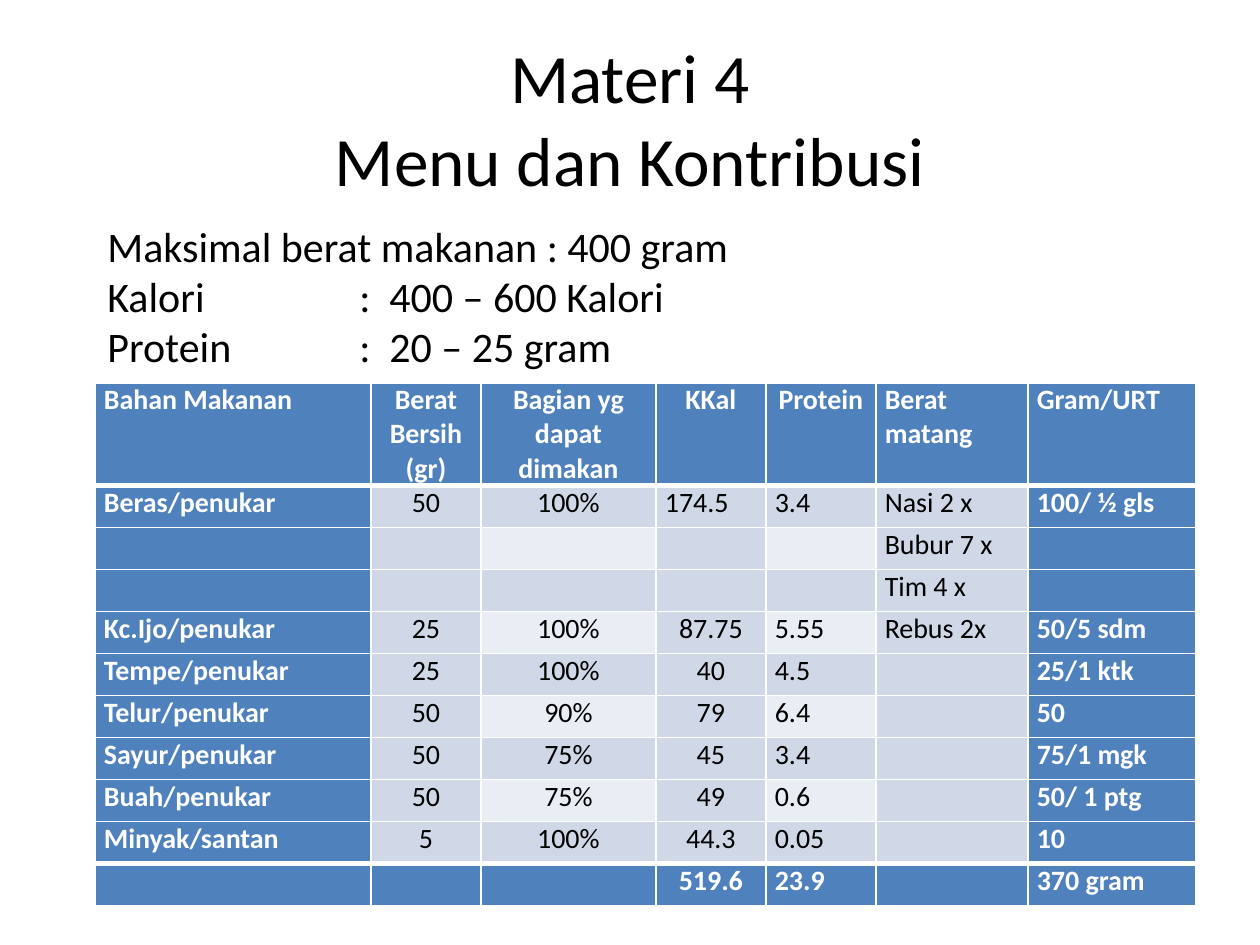
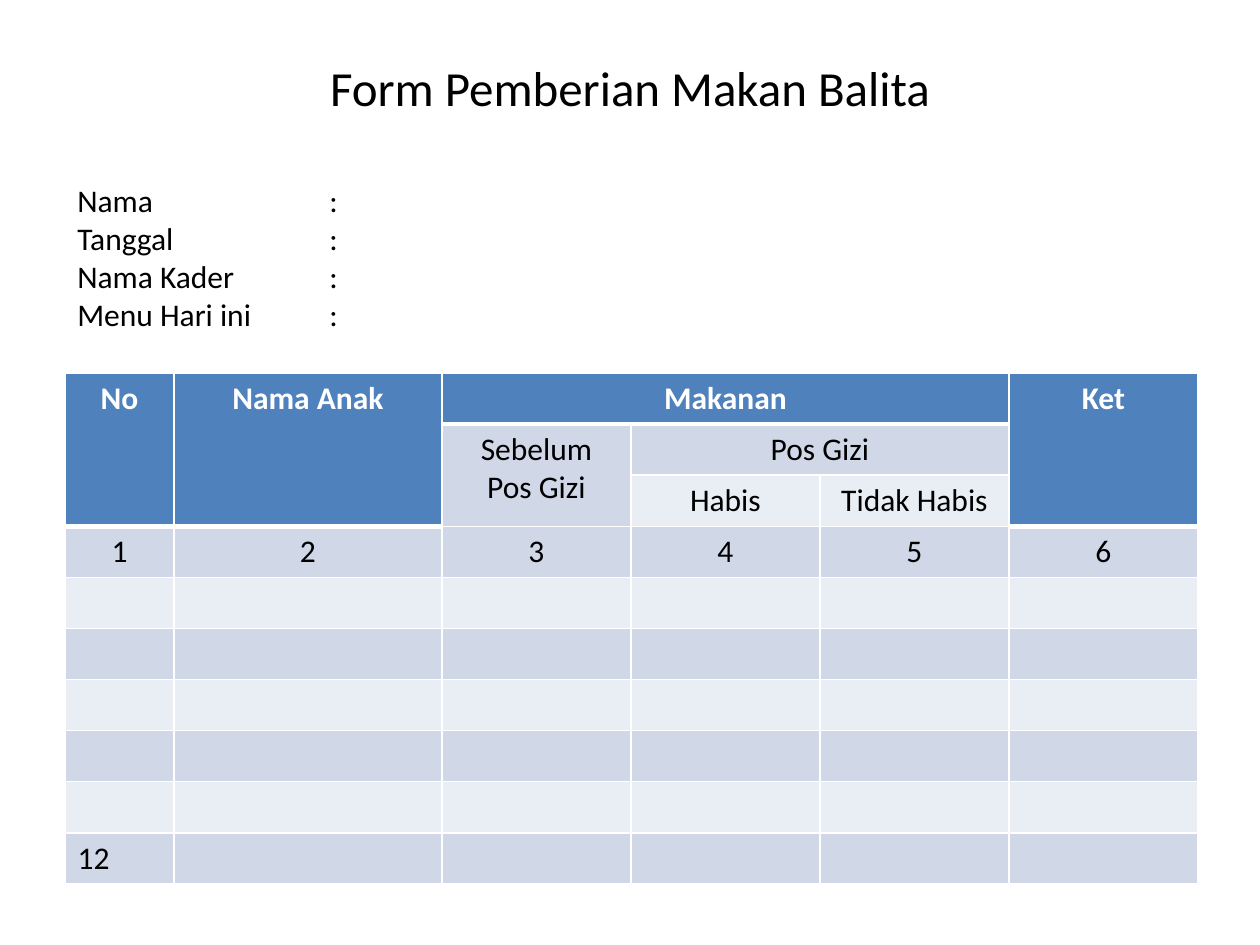
from dataclasses import dataclass

from lxml.etree import SubElement
from pptx import Presentation
from pptx.dml.color import RGBColor
from pptx.enum.text import MSO_ANCHOR, MSO_AUTO_SIZE, PP_ALIGN
from pptx.oxml.ns import qn
from pptx.util import Emu, Pt


@dataclass(frozen=True)
class Theme:
    font: str = "Calibri"
    text: str = "000000"
    inverse: str = "FFFFFF"
    header: str = "4F81BD"
    band: str = "D0D8E8"
    light: str = "E9EDF4"
    thin: int = 1
    thick: int = 3
    menu_title: float = 39.6
    form_title: int = 28
    menu_facts: int = 24
    menu_cell: int = 16
    form_text: int = 18


THEME = Theme()
PX = 914400 / 126
SLIDE_SIZE = (1260, 945)
TAB_STOPS = (252, 282)
TITLE_ONLY = 5

LEFT, CENTER, JUSTIFY = PP_ALIGN.LEFT, PP_ALIGN.CENTER, PP_ALIGN.JUSTIFY

MENU_TITLE = "Materi 4\vMenu dan Kontribusi"
MENU_FACTS = [
    ("Maksimal berat makanan : 400 gram",),
    ("Kalori", ":", "400 – 600 Kalori"),
    ("Protein", ":", "20 – 25 gram"),
]
MENU_ROWS = [
    ("Bahan Makanan", "Berat Bersih (gr)", "Bagian yg dapat dimakan", "KKal", "Protein", "Berat matang", "Gram/URT"),
    ("Beras/penukar", "50", "100%", "174.5", "3.4", "Nasi 2 x", "100/ ½ gls"),
    ("", "", "", "", "", "Bubur 7 x", ""),
    ("", "", "", "", "", "Tim 4 x", ""),
    ("Kc.Ijo/penukar", "25", "100%", "87.75", "5.55", "Rebus 2x", "50/5 sdm"),
    ("Tempe/penukar", "25", "100%", "40", "4.5", "", "25/1 ktk"),
    ("Telur/penukar", "50", "90%", "79", "6.4", "", "50"),
    ("Sayur/penukar", "50", "75%", "45", "3.4", "", "75/1 mgk"),
    ("Buah/penukar", "50", "75%", "49", "0.6", "", "50/ 1 ptg"),
    ("Minyak/santan", "5", "100%", "44.3", "0.05", "", "10"),
    ("", "", "", "519.6", "23.9", "", "370 gram"),
]
MENU_COLUMNS = (276, 110, 175, 110, 110, 152, 168)
MENU_HEIGHTS = [102] + [42] * 10
MENU_ALIGNMENTS = (JUSTIFY, CENTER, CENTER, CENTER, LEFT, JUSTIFY, JUSTIFY)

FORM_TITLE = "Form Pemberian Makan Balita"
FORM_FIELDS = [(name, ":") for name in ("Nama", "Tanggal", "Nama Kader", "Menu Hari ini")]
FORM_ROWS = [
    ("No", "Nama Anak", "Makanan", "", "", "Ket"),
    ("", "", "Sebelum\nPos Gizi", "Pos Gizi", "", ""),
    ("", "", "", "Habis", "Tidak Habis", ""),
    ("1", "2", "3", "4", "5", "6"),
    *[("",) * 6] * 5,
    ("12", "", "", "", "", ""),
]
FORM_COLUMNS = (109, 268, 189, 189, 189, 189)
FORM_HEIGHTS = [51] * 10
FORM_MERGES = [
    ((0, 0), (2, 0)),
    ((0, 1), (2, 1)),
    ((0, 5), (2, 5)),
    ((0, 2), (0, 4)),
    ((1, 2), (2, 2)),
    ((1, 3), (1, 4)),
]
FORM_TALL_HEADERS = (0, 1, 5)


def px(length):
    return Emu(round(length * PX))


def box(*lengths):
    return [px(length) for length in lengths]


def format_text(text_frame, size, color=THEME.text, bold=False, alignment=LEFT):
    for paragraph in text_frame.paragraphs:
        paragraph.alignment = alignment
        for run in paragraph.runs:
            run.font.name = THEME.font
            run.font.size = Pt(size)
            run.font.bold = bold
            run.font.color.rgb = RGBColor.from_string(color)


def add_titled_slide(presentation, title, size, height):
    slide = presentation.slides.add_slide(presentation.slide_layouts[TITLE_ONLY])
    shape = slide.shapes.title
    shape.left, shape.top, shape.width, shape.height = box(63, 38, 1134, height)
    text_frame = shape.text_frame
    text_frame.text = title
    text_frame.auto_size = MSO_AUTO_SIZE.NONE
    text_frame.vertical_anchor = MSO_ANCHOR.MIDDLE
    format_text(text_frame, size, alignment=CENTER)
    return slide


def add_tabbed_lines(slide, lines, area, size):
    text_frame = slide.shapes.add_textbox(*box(*area)).text_frame
    text_frame.word_wrap = True
    text_frame.text = "\n".join("\t".join(line) for line in lines)
    format_text(text_frame, size)
    for paragraph in text_frame.paragraphs:
        tabs = SubElement(paragraph._p.get_or_add_pPr(), qn("a:tabLst"))
        for stop in TAB_STOPS:
            SubElement(tabs, qn("a:tab"), pos=str(px(stop)), algn="l")


def set_borders(cell, thick_top, thick_bottom):
    properties = cell._tc.get_or_add_tcPr()
    for side, thick in (("L", False), ("R", False), ("T", thick_top), ("B", thick_bottom)):
        width = Pt(THEME.thick if thick else THEME.thin)
        line = SubElement(properties, qn(f"a:ln{side}"), w=str(width))
        fill = SubElement(line, qn("a:solidFill"))
        SubElement(fill, qn("a:srgbClr"), val=THEME.inverse)


def add_grid(slide, rows, corner, columns, heights, size, style, merges=(), margins=None):
    area = box(*corner, sum(columns), sum(heights))
    table = slide.shapes.add_table(len(rows), len(columns), *area).table
    table.horz_banding = False
    for column, width in zip(table.columns, columns):
        column.width = px(width)
    for row, height in zip(table.rows, heights):
        row.height = px(height)
    for first, last in merges:
        table.cell(*first).merge(table.cell(*last))
    for row, texts in enumerate(rows):
        for column, text in enumerate(texts):
            cell = table.cell(row, column)
            fill, alignment, thick_top, thick_bottom = style(row, column)
            set_borders(cell, thick_top, thick_bottom)
            cell.fill.solid()
            cell.fill.fore_color.rgb = RGBColor.from_string(fill)
            if margins:
                cell.margin_left, cell.margin_top, cell.margin_right, cell.margin_bottom = box(*margins)
            if text:
                cell.text_frame.text = text
                strong = fill == THEME.header
                color = THEME.inverse if strong else THEME.text
                format_text(cell.text_frame, size, color, strong, alignment)


def menu_style(row, column):
    last = len(MENU_ROWS) - 1
    if row in (0, last) or column in (0, len(MENU_COLUMNS) - 1):
        fill = THEME.header
    else:
        fill = THEME.light if row % 2 == 0 and column % 2 == 0 else THEME.band
    alignment = MENU_ALIGNMENTS[column]
    if (row, column) == (0, 4):
        alignment = CENTER
    elif (row, column) == (1, 3):
        alignment = LEFT
    return fill, alignment, row in (1, last), row in (0, last - 1)


def form_style(row, column):
    tall = column in FORM_TALL_HEADERS
    if row == 0 or tall and row < 3:
        fill = THEME.header
    else:
        fill = THEME.band if row % 2 else THEME.light
    alignment = LEFT if row == len(FORM_ROWS) - 1 else CENTER
    thick_top = row == (3 if tall else 1)
    thick_bottom = row == 0 or tall and row == 2
    return fill, alignment, thick_top, thick_bottom


def build_menu(presentation):
    slide = add_titled_slide(presentation, MENU_TITLE, THEME.menu_title, 158)
    add_grid(slide, MENU_ROWS, (95, 383), MENU_COLUMNS, MENU_HEIGHTS,
             THEME.menu_cell, menu_style, margins=(9, 0, 9, 0))
    add_tabbed_lines(slide, MENU_FACTS, (95, 214, 1091, 165), THEME.menu_facts)


def build_form(presentation):
    slide = add_titled_slide(presentation, FORM_TITLE, THEME.form_title, 97)
    add_grid(slide, FORM_ROWS, (65, 373), FORM_COLUMNS, FORM_HEIGHTS,
             THEME.form_text, form_style, merges=FORM_MERGES)
    add_tabbed_lines(slide, FORM_FIELDS, (65, 175, 1131, 165), THEME.form_text)


def main():
    presentation = Presentation()
    presentation.slide_width, presentation.slide_height = box(*SLIDE_SIZE)
    build_menu(presentation)
    build_form(presentation)
    presentation.save("out.pptx")


if __name__ == "__main__":
    main()
